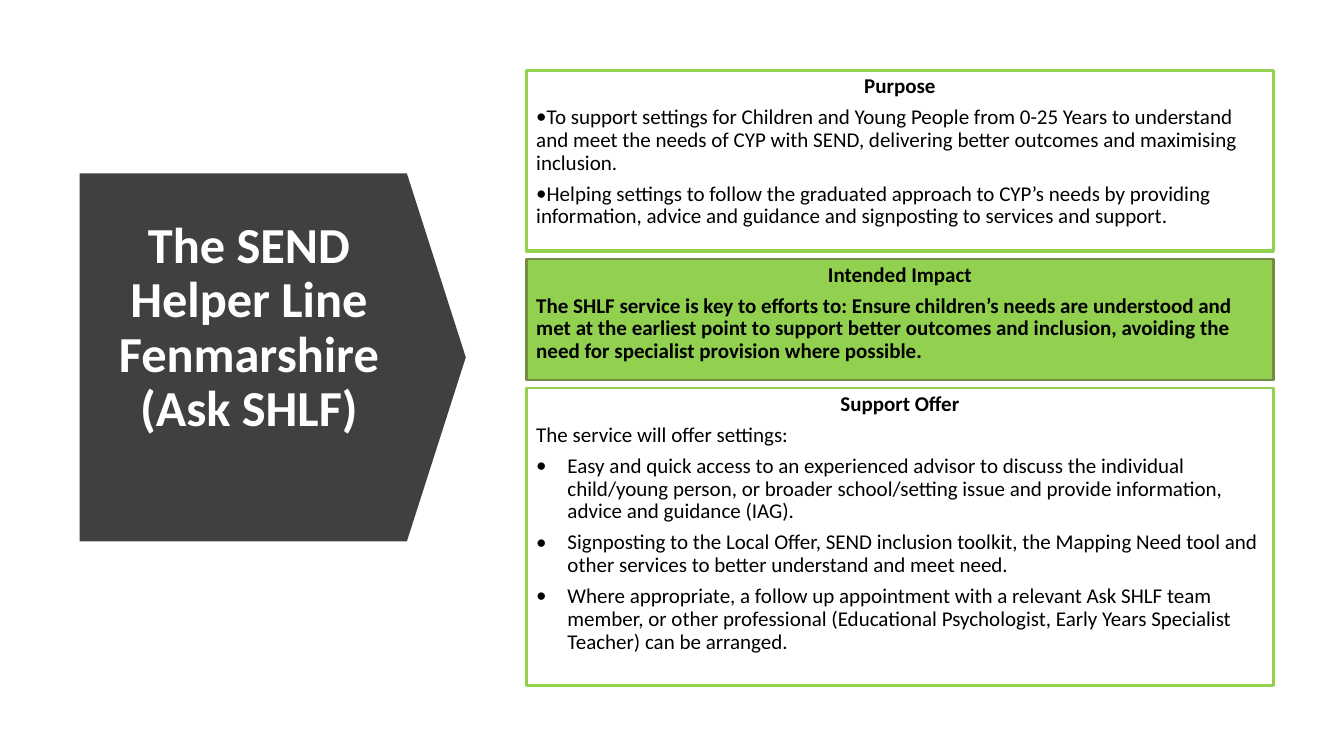
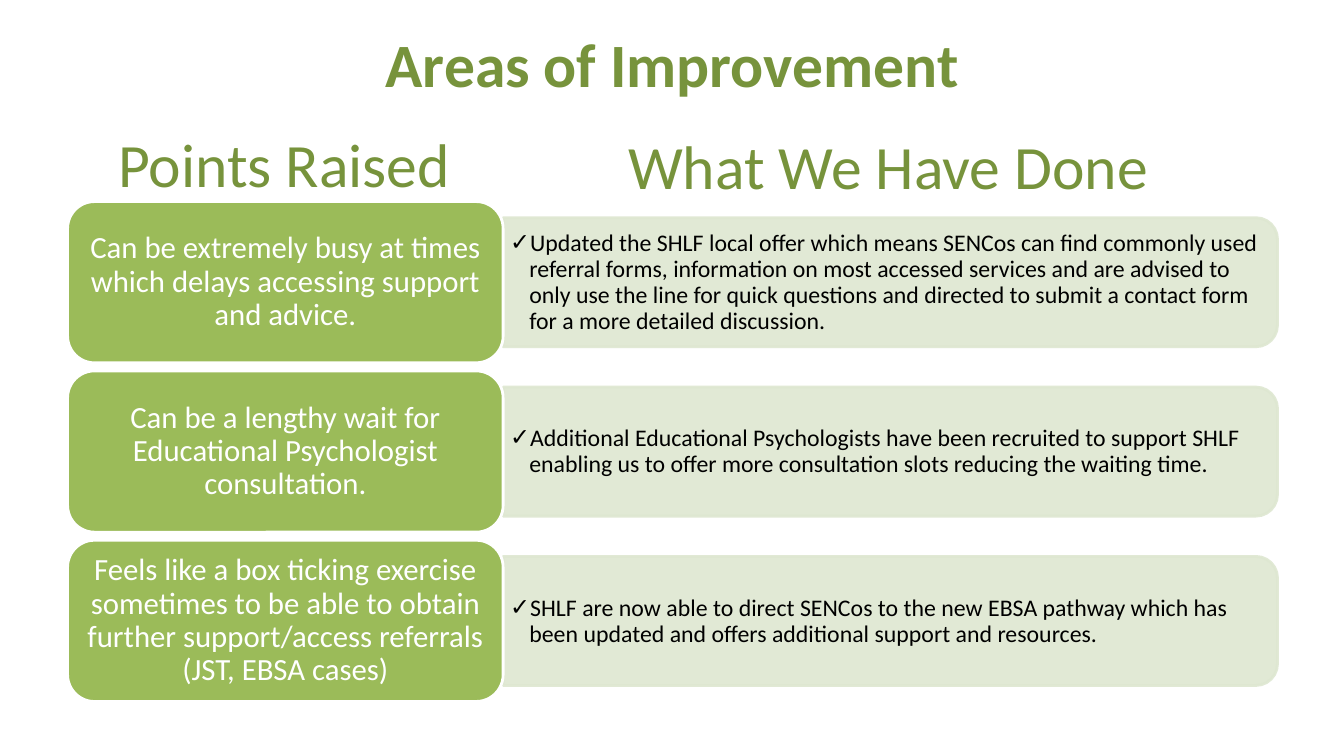
from lxml.etree import SubElement
from pptx import Presentation
from pptx.dml.color import RGBColor
from pptx.enum.shapes import MSO_SHAPE
from pptx.enum.text import MSO_ANCHOR, PP_ALIGN
from pptx.oxml.ns import qn
from pptx.util import Pt

PX = 9144  # 100 px to the inch
FONT = "Calibri"
BLACK = RGBColor(0x00, 0x00, 0x00)
WHITE = RGBColor(0xFF, 0xFF, 0xFF)
CHARCOAL = RGBColor(0x40, 0x40, 0x40)
LIME = RGBColor(0x92, 0xD0, 0x50)
MOSS = RGBColor(0x73, 0x8A, 0x42)
OLIVE = RGBColor(0x77, 0x93, 0x3C)
LEAF = RGBColor(0x9B, 0xBB, 0x59)
PALE = RGBColor(0xDE, 0xE7, 0xD1)


class Deck:
    """Holds the shared style and the current slide."""

    def __init__(self):
        self.prs = Presentation()
        self.prs.slide_width, self.prs.slide_height = 1333 * PX, 750 * PX
        self.s = None

    def new_slide(self):
        self.s = self.prs.slides.add_slide(self.prs.slide_layouts[6])

    def shape(self, kind, box, fill=None, line=None, width=2, alpha=None):
        sp = self.s.shapes.add_shape(kind, *(v * PX for v in box))
        sp.shadow.inherit = False
        for paint, color in ((sp.fill, fill), (sp.line.fill, line)):
            if color is None:
                paint.background()
            else:
                paint.solid()
                paint.fore_color.rgb = color
        if line is not None:
            sp.line.width = Pt(width)
        if alpha:
            for clr in sp._element.spPr.iter(qn("a:srgbClr")):
                SubElement(clr, qn("a:alpha"), val=str(alpha * 1000))
        return sp

    def frame(self, sp, inset=(10, 5), anchor=MSO_ANCHOR.MIDDLE):
        tf = sp.text_frame
        tf.word_wrap = True
        tf.vertical_anchor = anchor
        tf.margin_left = tf.margin_right = inset[0] * PX
        tf.margin_top = tf.margin_bottom = inset[1] * PX
        return tf

    def paragraph(self, p, text, size, color=BLACK, bold=False,
                  align=PP_ALIGN.CENTER, spacing=0.9, after=0):
        p.text = text
        p.alignment = align
        p.line_spacing = spacing
        p.space_after = Pt(after)
        for r in p.runs:
            r.font.name, r.font.size = FONT, Pt(size)
            r.font.bold, r.font.color.rgb = bold, color

    def bullet(self, p, char, margin, indent):
        pPr = p._p.get_or_add_pPr()
        pPr.set("marL", str(margin * PX))
        pPr.set("indent", str(indent * PX))
        SubElement(pPr, qn("a:buFont"), typeface=FONT)
        SubElement(pPr, qn("a:buChar"), char=char)

    def text(self, box, text, size, color, inset=(10, 5), **style):
        sp = self.s.shapes.add_textbox(*(v * PX for v in box))
        p = self.frame(sp, inset).paragraphs[0]
        self.paragraph(p, text, size, color, **style)
        return p

    def heading(self, box, text, bold=False):
        self.text(box, text, 44, OLIVE, bold=bold, spacing=1)

    def card(self, box, title, body, bold=False, margin=0, indent=0, **paint):
        """Box with a centred title; body items are (text, is_bullet)."""
        sp = self.shape(MSO_SHAPE.RECTANGLE, box, **paint)
        tf = self.frame(sp, anchor=MSO_ANCHOR.TOP)
        self.paragraph(tf.paragraphs[0], title, 15, bold=True, after=6)
        for text, bulleted in body:
            p = tf.add_paragraph()
            self.paragraph(p, text, 15, bold=bold, align=PP_ALIGN.LEFT, after=6)
            if bulleted:
                self.bullet(p, "•", margin, indent)

    def response_row(self, top, point, action):
        """Raised point on the left, action taken on the right."""
        mid = top + 80
        # Upright shape turned a quarter, so its rounded end faces right
        sp = self.shape(MSO_SHAPE.ROUND_2_SAME_RECTANGLE,
                        (819, mid - 384, 128, 768), PALE, PALE, alpha=90)
        sp.rotation = 90
        p = self.text((499, mid - 57, 762, 115), action, 17, BLACK,
                      inset=(7, 4), align=PP_ALIGN.LEFT)
        self.bullet(p, "✓", 19, -19)
        sp = self.shape(MSO_SHAPE.ROUNDED_RECTANGLE, (67, top, 432, 160), LEAF, WHITE)
        self.paragraph(self.frame(sp, (9, 5)).paragraphs[0], point, 22, WHITE)


def advice_line_slide(deck):
    deck.new_slide()
    # Arrow panel with the title
    sp = deck.shape(MSO_SHAPE.PENTAGON, (79, 172, 383, 365), CHARCOAL)
    sp.adjustments[0] = 0.16
    deck.text((94, 213, 306, 226), "The SEND Helper Line Fenmarshire (Ask SHLF)",
              36, WHITE, bold=True)

    # Stacked cards
    cards = [
        (179, "Purpose", [
            ("To support settings for Children and Young People from 0-25 Years to "
             "understand and meet the needs of CYP with SEND, delivering better "
             "outcomes and maximising inclusion.", True),
            ("Helping settings to follow the graduated approach to CYP’s needs by "
             "providing information, advice and guidance and signposting to services "
             "and support.", True),
        ], dict(line=LIME, width=2.25, indent=-25)),
        (120, "Intended Impact", [
            ("The SHLF service is key to efforts to: Ensure children’s needs are "
             "understood and met at the earliest point to support better outcomes and "
             "inclusion, avoiding the need for specialist provision where possible.",
             False),
        ], dict(fill=LIME, line=MOSS, bold=True)),
        (295, "Support Offer", [
            ("The service will offer settings:", False),
            ("Easy and quick access to an experienced advisor to discuss the "
             "individual child/young person, or broader school/setting issue and "
             "provide information, advice and guidance (IAG).", True),
            ("Signposting to the Local Offer, SEND inclusion toolkit, the Mapping Need "
             "tool and other services to better understand and meet need.", True),
            ("Where appropriate, a follow up appointment with a relevant Ask SHLF team "
             "member, or other professional (Educational Psychologist, Early Years "
             "Specialist Teacher) can be arranged.", True),
        ], dict(line=LIME, margin=31, indent=-31)),
    ]
    top = 70
    for height, title, body, style in cards:
        deck.card((522, top, 741, height), title, body, **style)
        top += height + 8


def improvement_slide(deck):
    deck.new_slide()
    # Title and column headings
    deck.heading((67, 0, 1200, 125), "Areas of Improvement", bold=True)
    deck.heading((67, 123, 430, 78), "Points Raised")
    deck.heading((496, 125, 770, 78), "What We Have Done")

    # Rows of points and responses
    rows = [
        ("Can be extremely busy at times which delays accessing support and advice.",
         "Updated the SHLF local offer which means SENCos can find commonly used "
         "referral forms, information on most accessed services and are advised to "
         "only use the line for quick questions and directed to submit a contact form "
         "for a more detailed discussion."),
        ("Can be a lengthy wait for Educational Psychologist consultation.",
         "Additional Educational Psychologists have been recruited to support SHLF "
         "enabling us to offer more consultation slots reducing the waiting time."),
        ("Feels like a box ticking exercise sometimes to be able to obtain further "
         "support/access referrals (JST, EBSA cases)",
         "SHLF are now able to direct SENCos to the new EBSA pathway which has been "
         "updated and offers additional support and resources."),
    ]
    for i, (point, action) in enumerate(rows):
        deck.response_row(200 + 168 * i, point, action)


def main():
    deck = Deck()
    advice_line_slide(deck)
    improvement_slide(deck)
    deck.prs.save("out.pptx")


if __name__ == "__main__":
    main()
